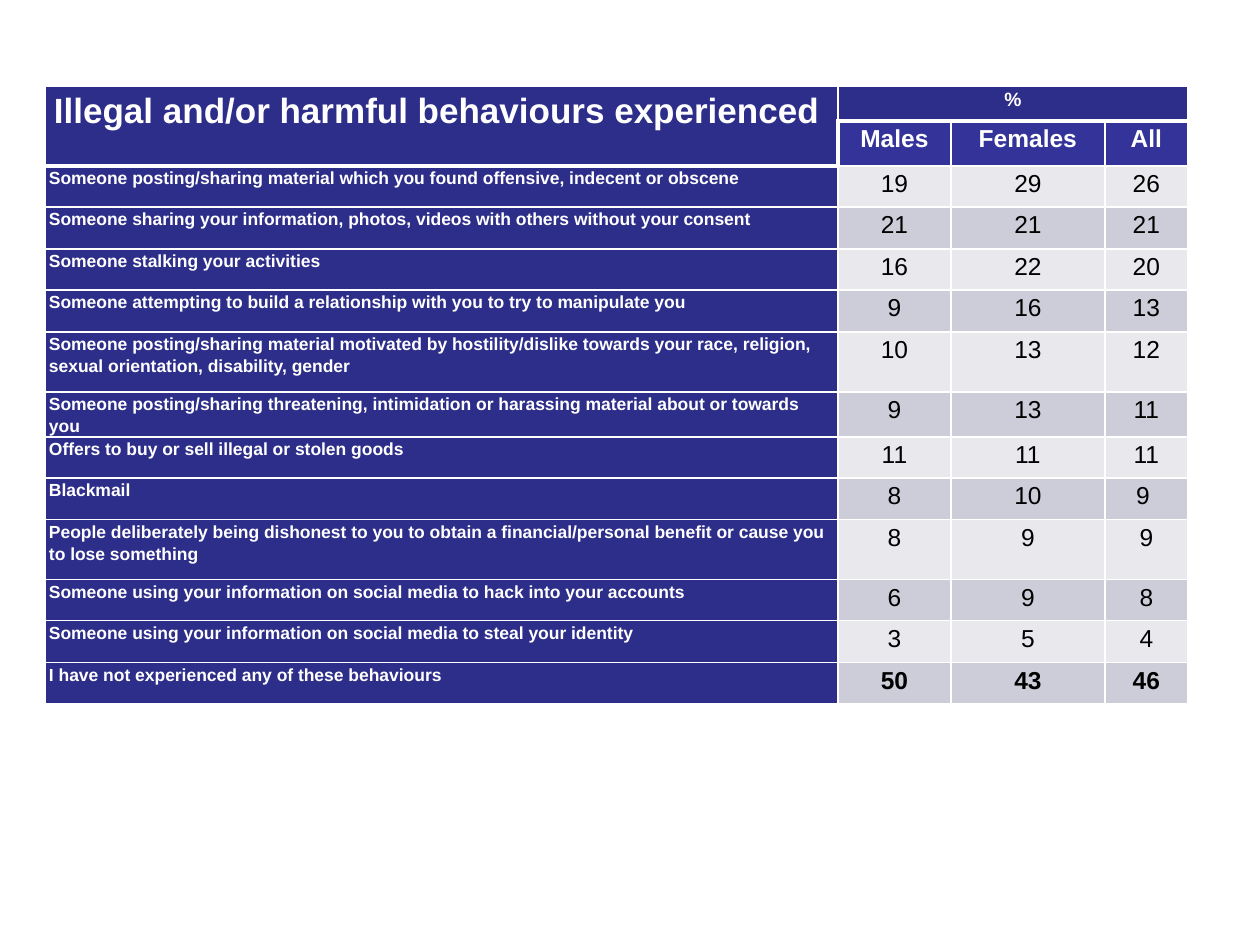
from lxml import etree
from pptx import Presentation
from pptx.dml.color import RGBColor
from pptx.enum.text import PP_ALIGN
from pptx.oxml.ns import qn
from pptx.util import Pt

LEFT, MID = PP_ALIGN.LEFT, PP_ALIGN.CENTER
NAVY = RGBColor(0x2D, 0x2D, 0x8A)
BLUE = RGBColor(0x33, 0x33, 0x99)
PALE = RGBColor(0xE8, 0xE8, 0xED)
GREY = RGBColor(0xCD, 0xCD, 0xDA)
WHITE = RGBColor(0xFF, 0xFF, 0xFF)
BLACK = RGBColor(0, 0, 0)

TITLE = "Illegal and/or harmful behaviours experienced"
GROUPS = ["Males", "Females", "All"]
DATA = [
    ("Someone posting/sharing material which you found offensive, indecent or obscene", "19", "29", "26"),
    ("Someone sharing your information, photos, videos with others without your consent", "21", "21", "21"),
    ("Someone stalking your activities", "16", "22", "20"),
    ("Someone attempting to build a relationship with you to try to manipulate you", "9", "16", "13"),
    ("Someone posting/sharing material motivated by hostility/dislike towards your race, religion, "
     "sexual orientation, disability, gender", "10", "13", "12"),
    ("Someone posting/sharing threatening, intimidation or harassing material about or towards you",
     "9", "13", "11"),
    ("Offers to buy or sell illegal or stolen goods", "11", "11", "11"),
    ("Blackmail", "8", "10", "9 "),
    ("People deliberately being dishonest to you to obtain a financial/personal benefit or cause you "
     "to lose something", "8", "9", "9"),
    ("Someone using your information on social media to hack into your accounts", "6", "9", "8"),
    ("Someone using your information on social media to steal your identity", "3", "5", "4"),
    ("I have not experienced any of these behaviours", "50", "43", "46"),
]
COLS = [793, 113, 154, 83]
ROWS = [35, 44, 41, 42, 41, 42, 60, 42, 41, 42, 60, 41, 42, 41]
X, Y = 45, 86
PAD = 4
THIN, THICK = 1, 3


def px(n):
    return round(n * 914400 / 126)


def rule(cell, **wide):
    """Draw white cell borders; wide maps a side (L, R, T, B) to its points."""
    props = cell._tc.get_or_add_tcPr()
    for i, side in enumerate("LRTB"):
        line = etree.Element(qn("a:ln" + side), w=str(Pt(wide.get(side, THIN))))
        fill = etree.SubElement(line, qn("a:solidFill"))
        etree.SubElement(fill, qn("a:srgbClr"), val=str(WHITE))
        props.insert(i, line)


def paint(cell, fill, **wide):
    cell.fill.solid()
    cell.fill.fore_color.rgb = fill
    rule(cell, **wide)


def write(cell, text, size, color=WHITE, bold=True, align=MID, left=PAD):
    cell.margin_left, cell.margin_right = px(left), px(PAD)
    cell.margin_top = cell.margin_bottom = 0
    para = cell.text_frame.paragraphs[0]
    para.alignment = align
    para.line_spacing = 1.15
    para.space_after = Pt(8)
    run = para.add_run()
    run.text = text
    font = run.font
    font.name, font.size, font.bold = "Arial", Pt(size), bold
    font.color.rgb = color


def add_head(table):
    paint(table.cell(0, 0), NAVY, B=THICK)
    paint(table.cell(1, 0), NAVY, R=THICK, B=THICK)
    for c, group in enumerate(GROUPS, 1):
        paint(table.cell(0, c), NAVY, B=THICK)
        cell = table.cell(1, c)
        paint(cell, BLUE, T=THICK, L=THICK if c == 1 else THIN)
        write(cell, group, 14)
    table.cell(0, 0).merge(table.cell(1, 0))
    table.cell(0, 1).merge(table.cell(0, 3))
    write(table.cell(0, 0), TITLE, 20, align=LEFT, left=9)
    write(table.cell(0, 1), "%", 11)


def add_body(table):
    for r, (label, *values) in enumerate(DATA, 2):
        name = table.cell(r, 0)
        paint(name, NAVY, T=THICK if r == 2 else THIN)
        write(name, label, 10, align=LEFT)
        for c, value in enumerate(values, 1):
            cell = table.cell(r, c)
            paint(cell, GREY if r % 2 else PALE)
            write(cell, value, 14, BLACK, bold=r == len(ROWS) - 1)


def main():
    deck = Presentation()
    deck.slide_width, deck.slide_height = px(1260), px(945)
    slide = deck.slides.add_slide(deck.slide_layouts[6])
    table = slide.shapes.add_table(len(ROWS), len(COLS), px(X), px(Y),
                                   px(sum(COLS)), px(sum(ROWS))).table
    table.first_row = table.horz_banding = False
    for col, width in zip(table.columns, COLS):
        col.width = px(width)
    for row, height in zip(table.rows, ROWS):
        row.height = px(height)
    add_head(table)
    add_body(table)
    deck.save("out.pptx")


if __name__ == "__main__":
    main()
